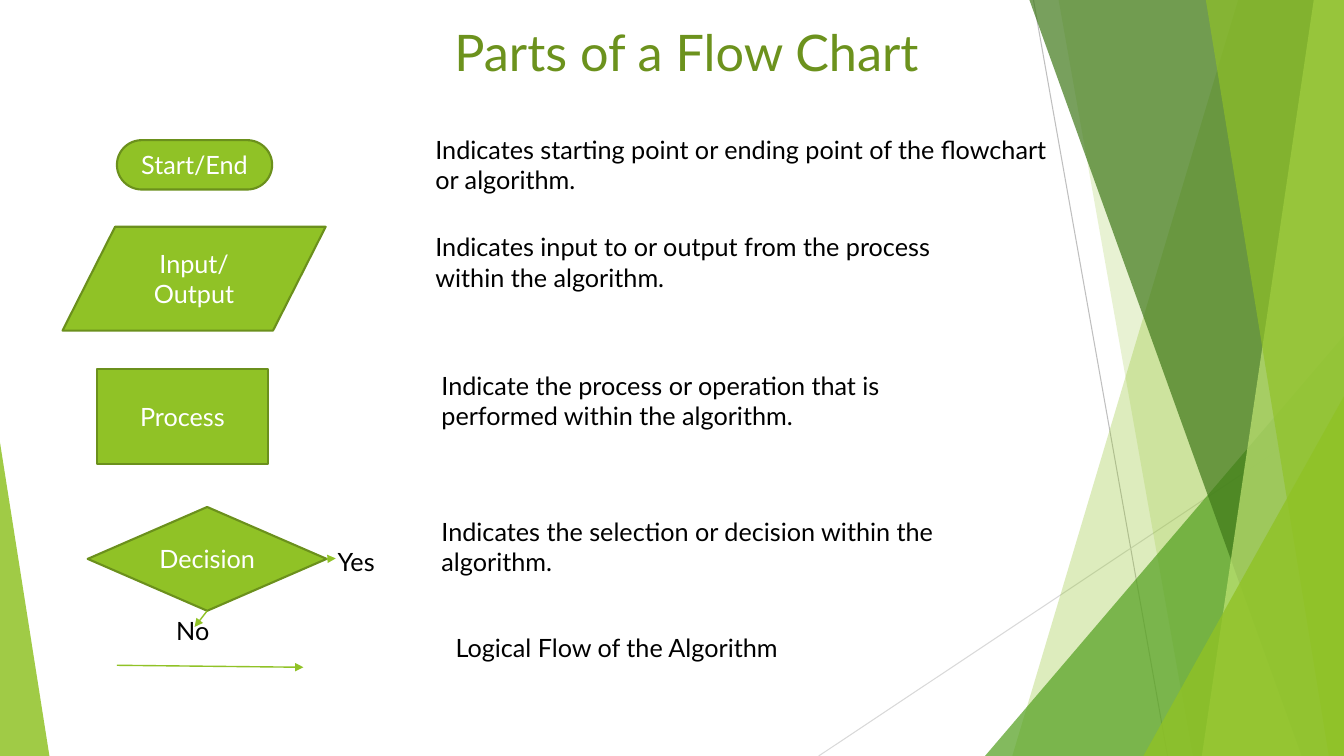
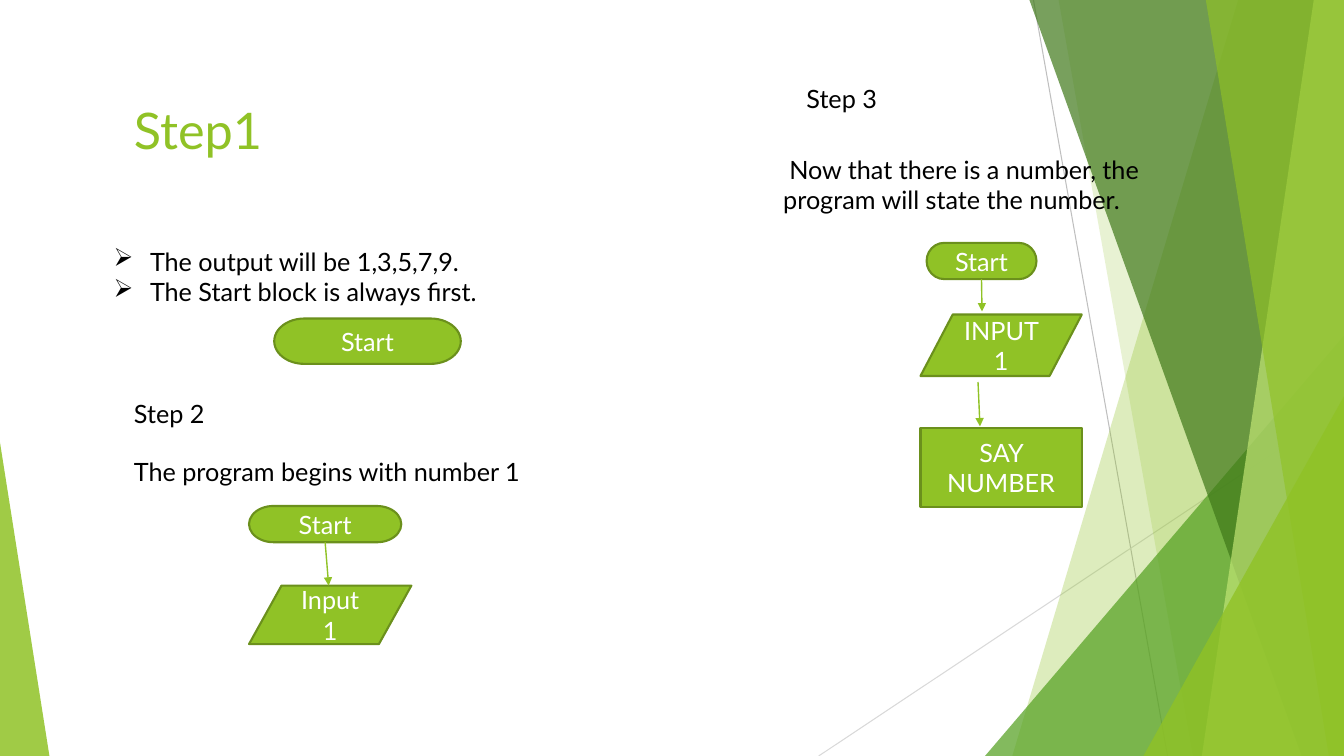
"""Build two slides that explain flow chart symbols and a counting program."""
from dataclasses import dataclass
from typing import Optional, Union

from lxml import etree
from pptx import Presentation
from pptx.dml.color import RGBColor
from pptx.enum.shapes import MSO_CONNECTOR, MSO_SHAPE
from pptx.enum.text import PP_ALIGN
from pptx.oxml.ns import qn
from pptx.util import Inches, Pt

STRAIGHT = MSO_CONNECTOR.STRAIGHT
TRIANGLE = MSO_SHAPE.ISOSCELES_TRIANGLE
TERMINATOR = MSO_SHAPE.FLOWCHART_TERMINATOR
DATA = MSO_SHAPE.FLOWCHART_DATA
PROCESS = MSO_SHAPE.FLOWCHART_PROCESS
DECISION = MSO_SHAPE.FLOWCHART_DECISION
LEFT, CENTER = PP_ALIGN.LEFT, PP_ALIGN.CENTER
BOTTOM, RIGHT = 2, 3

SLIDE_W, SLIDE_H = 13.33, 7.5
COLORS = {
    "green": "90C226",
    "outline": "6B901C",
    "title": "6C921D",
    "leaf": "54A021",
    "forest": "3F7819",
    "lime": "C0E474",
    "gray": "BFBFBF",
    "pale": "D9D9D9",
    "black": "000000",
    "white": "FFFFFF",
}
BODY = {"name": "Lato", "size": Pt(18)}
TITLE = {"name": "Lato", "size": Pt(36)}


@dataclass(frozen=True)
class Band:
    """A strip from its slanted left edge to the right side of the slide."""
    top_x: float
    foot_x: float
    color: str
    alpha: int


@dataclass(frozen=True)
class Wedge:
    """A right triangle that stands on the bottom of the slide."""
    x: float
    y: float
    w: float
    apex: float
    color: str
    alpha: int


@dataclass(frozen=True)
class Line:
    """A straight line; an arrow may begin at a side of a node."""
    x1: float
    y1: float
    x2: float
    y2: float
    color: str = "green"
    width: float = 1
    arrow: bool = True
    node: Optional[int] = None
    side: int = BOTTOM


@dataclass(frozen=True)
class Node:
    """A flow chart symbol."""
    kind: int
    text: str
    x: float
    y: float
    w: float
    h: float


@dataclass(frozen=True)
class Label:
    """A text box with one paragraph per line of text."""
    text: str
    x: float
    y: float
    w: float
    h: float = 0.4
    color: str = "black"
    align: int = LEFT
    title: bool = False
    margin: float = 0
    indent: float = 0
    bullet: str = ""


@dataclass(frozen=True)
class Page:
    """The content of one slide."""
    labels: tuple[Label, ...]
    nodes: tuple[Node, ...]
    arrows: tuple[Line, ...]


RULES = (
    Line(10.25, 0, 11.58, SLIDE_H, "gray", 0.75, False),
    Line(SLIDE_W, 4.03, 8.12, SLIDE_H, "pale", 0.75, False),
)
FACETS = (
    Band(12.28, 10.04, "green", 30),
    Band(10.5, 11.83, "green", 20),
    Wedge(9.77, 3.33, 3.56, 1, "leaf", 72),
    Band(10.21, 12.91, "forest", 70),
    Band(13.03, 11.92, "lime", 70),
    Band(11.96, 13.18, "green", 65),
    Wedge(11.34, 3.93, 1.99, 1, "green", 80),
    Wedge(0, 4.39, 0.49, 0, "green", 85),
)

PAGES = (
    Page(
        labels=(
            Label("Parts of a Flow Chart", 1.06, 0.16, 11.5, 0.88, "title", CENTER, True),
            Label("Indicates starting point or ending point of the flowchart or algorithm.",
                  4.22, 1.28, 6.37, 0.71),
            Label("Indicates input to or output from the process within the algorithm.",
                  4.22, 2.25, 5.6, 0.71),
            Label("Indicate the process or operation that is performed within the algorithm.",
                  4.28, 3.62, 5, 0.71),
            Label("Indicates the selection or decision within the algorithm.",
                  4.28, 5.07, 5.55, 0.71),
            Label("Logical Flow of the Algorithm", 4.42, 6.22, 4.97),
            Label("Yes", 3.25, 5.37, 0.87),
            Label("No", 1.65, 6.06, 0.64),
        ),
        nodes=(
            Node(TERMINATOR, "Start/End", 1.16, 1.39, 1.54, 0.49),
            Node(DATA, "Input/Output", 0.62, 2.25, 2.61, 1.03),
            Node(PROCESS, "Process", 0.96, 3.66, 1.7, 0.94),
            Node(DECISION, "Decision", 0.87, 5.03, 2.37, 1.03),
        ),
        arrows=(
            Line(1.16, 6.6, 3.01, 6.62),
            Line(3.23, 5.54, 3.33, 5.54, node=3, side=RIGHT),
            Line(2.05, 6.05, 1.93, 6.22, node=3),
        ),
    ),
    Page(
        labels=(
            Label("Step1", 1.23, 0.93, 1.99, 1.23, "green", title=True),
            Label("The output will be 1,3,5,7,9.\nThe Start block is always first.",
                  1.03, 2.39, 7.06, 0.71, margin=0.36, indent=-0.36, bullet="➢"),
            Label("Step 2", 1.23, 3.9, 1.75),
            Label("The program begins with number 1", 1.23, 4.48, 4.29),
            Label("Step 3", 7.9, 0.78, 1.6),
            Label("Now that there is a number, the program will state the number.",
                  7.67, 1.48, 4.34, 0.71, indent=0.06),
        ),
        nodes=(
            Node(TERMINATOR, "Start", 2.72, 3.16, 1.85, 0.45),
            Node(TERMINATOR, "Start", 2.47, 5.02, 1.51, 0.36),
            Node(DATA, "Input 1", 2.47, 5.81, 1.61, 0.58),
            Node(TERMINATOR, "Start", 9.19, 2.41, 1.09, 0.36),
            Node(DATA, "INPUT 1", 9.13, 3.12, 1.6, 0.61),
            Node(PROCESS, "SAY NUMBER", 9.13, 4.25, 1.6, 0.78),
        ),
        arrows=(
            Line(3.22, 5.38, 3.26, 5.81, node=1),
            Line(9.72, 2.78, 9.74, 3.09, node=3),
            Line(9.7, 3.79, 9.72, 4.23),
        ),
    ),
)


def rgb(name: str) -> RGBColor:
    """Look up a colour by name."""
    return RGBColor.from_string(COLORS[name])


def write(p, text: str, color: str, formats: dict) -> None:
    """Add a formatted run to a paragraph."""
    r = p.add_run()
    r.text = text
    for key, value in formats.items():
        setattr(r.font, key, value)
    r.font.color.rgb = rgb(color)


def paint(sp, color: str) -> None:
    """Give a shape a flat fill without shadow."""
    sp.shadow.inherit = False
    sp.fill.solid()
    sp.fill.fore_color.rgb = rgb(color)


def draw_facet(s, facet: Union[Band, Wedge]) -> None:
    """Draw one translucent part of the backdrop."""
    if isinstance(facet, Band):
        builder = s.shapes.build_freeform(Inches(facet.top_x), 0, scale=1.0)
        corners = ((SLIDE_W, 0), (SLIDE_W, SLIDE_H), (facet.foot_x, SLIDE_H))
        builder.add_line_segments([(Inches(x), Inches(y)) for x, y in corners], close=True)
        sp = builder.convert_to_shape()
    else:
        sp = s.shapes.add_shape(TRIANGLE, Inches(facet.x), Inches(facet.y),
                                Inches(facet.w), Inches(SLIDE_H - facet.y))
        sp.adjustments[0] = facet.apex
    paint(sp, facet.color)
    clr = sp._element.spPr.find(".//" + qn("a:srgbClr"))
    etree.SubElement(clr, qn("a:alpha"), val=str(facet.alpha * 1000))
    sp.line.fill.background()


def draw_line(s, line: Line, nodes: list) -> None:
    """Draw a line, joined to its node and with an arrowhead where asked."""
    cxn = s.shapes.add_connector(STRAIGHT, Inches(line.x1), Inches(line.y1),
                                 Inches(line.x2), Inches(line.y2))
    if line.node is not None:
        cxn.begin_connect(nodes[line.node], line.side)
    cxn.line.color.rgb = rgb(line.color)
    cxn.line.width = Pt(line.width)
    sp_pr = cxn._element.spPr
    if line.arrow:
        etree.SubElement(sp_pr.find(qn("a:ln")), qn("a:tailEnd"), type="triangle")
    etree.SubElement(sp_pr, qn("a:effectLst"))


def draw_node(s, node: Node):
    """Draw a flow chart symbol and return its shape."""
    sp = s.shapes.add_shape(node.kind, Inches(node.x), Inches(node.y),
                            Inches(node.w), Inches(node.h))
    paint(sp, "green")
    sp.line.color.rgb = rgb("outline")
    sp.line.width = Pt(1.5)
    p = sp.text_frame.paragraphs[0]
    p.alignment = CENTER
    write(p, node.text, "white", BODY)
    return sp


def draw_label(s, label: Label) -> None:
    """Draw a text box, with bullets where asked."""
    tf = s.shapes.add_textbox(Inches(label.x), Inches(label.y),
                              Inches(label.w), Inches(label.h)).text_frame
    tf.word_wrap = True
    for i, text in enumerate(label.text.split("\n")):
        p = tf.add_paragraph() if i else tf.paragraphs[0]
        p.alignment = label.align
        p_pr = p._p.get_or_add_pPr()
        p_pr.set("marL", str(Inches(label.margin)))
        p_pr.set("indent", str(Inches(label.indent)))
        if label.bullet:
            etree.SubElement(p_pr, qn("a:buChar"), char=label.bullet)
        write(p, text, label.color, TITLE if label.title else BODY)


def draw_page(prs, page: Page) -> None:
    """Add a slide with the shared backdrop and the page content."""
    s = prs.slides.add_slide(prs.slide_layouts[6])
    for rule in RULES:
        draw_line(s, rule, [])
    for facet in FACETS:
        draw_facet(s, facet)
    nodes = [draw_node(s, node) for node in page.nodes]
    for arrow in page.arrows:
        draw_line(s, arrow, nodes)
    for label in page.labels:
        draw_label(s, label)


def main() -> None:
    """Build and save the presentation."""
    prs = Presentation()
    prs.slide_width, prs.slide_height = Inches(SLIDE_W), Inches(SLIDE_H)
    for page in PAGES:
        draw_page(prs, page)
    prs.save("out.pptx")


if __name__ == "__main__":
    main()
